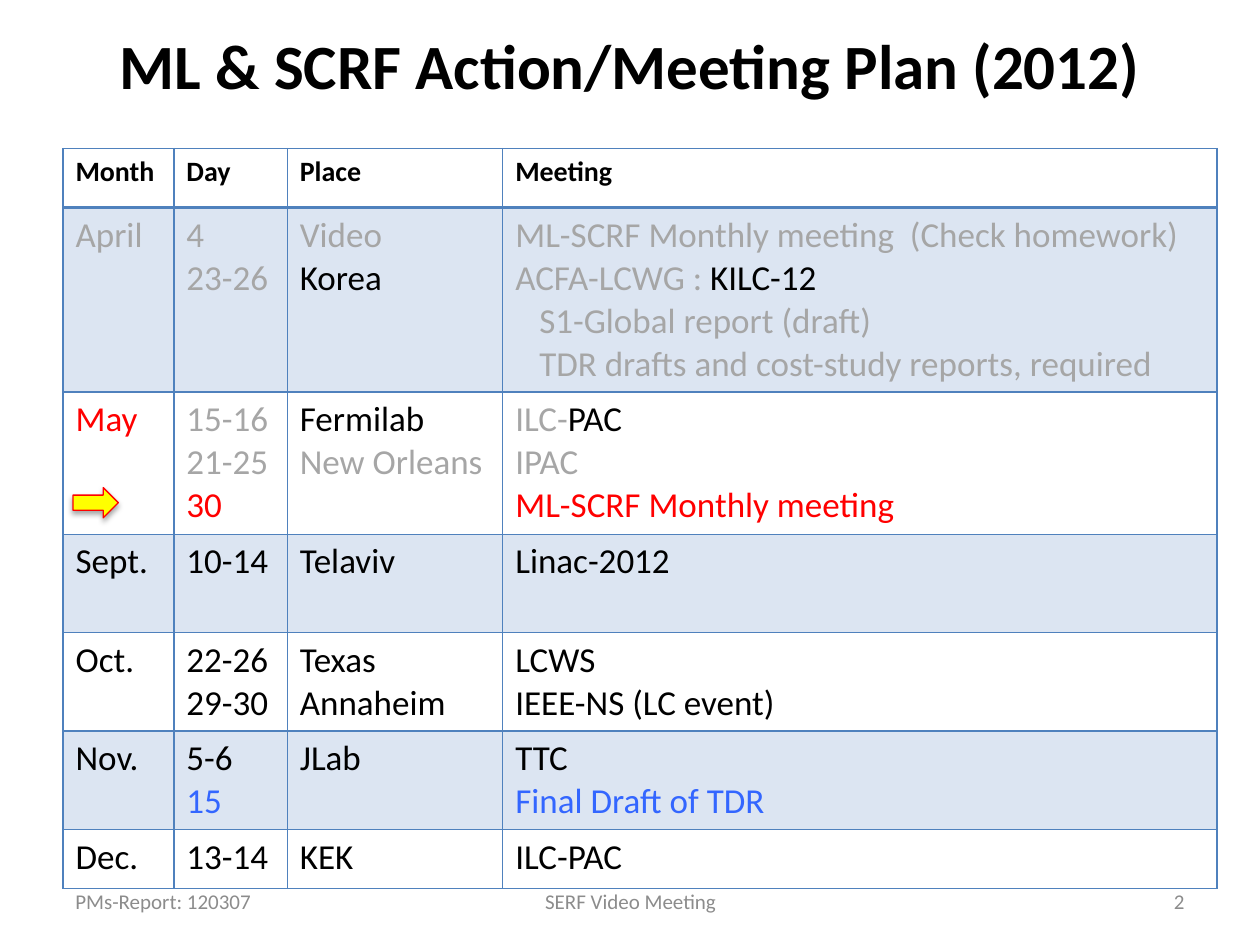
"""Build the 2012 meeting plan slide."""
from lxml import etree
from pptx import Presentation
from pptx import util as u
from pptx.dml import color
from pptx.enum import shapes, text
from pptx.oxml import ns

GRAY, RED, BLUE, EDGE = "A6A6A6", "FF0000", "3366FF", "4F81BD"
LEFT, MID, RIGHT = text.PP_ALIGN.LEFT, text.PP_ALIGN.CENTER, text.PP_ALIGN.RIGHT


def rgb(code):
    """Turn a hex string into a colour."""
    return color.RGBColor.from_string(code)


def node(parent, tag, **attrs):
    """Add a drawing element with its attributes."""
    item = etree.SubElement(parent, ns.qn("a:" + tag))
    for key, val in attrs.items():
        item.set(key, str(val))
    return item


def box(*vals):
    """Give left, top, width and height as lengths."""
    return [u.Inches(val) for val in vals]


class Deck:
    """Hold the style and the current slide."""

    base = {"name": "Calibri", "size": u.Pt(20), "bold": False}

    def __init__(self, prs):
        """Add a slide with a title."""
        self.slide = prs.slides.add_slide(prs.slide_layouts[5])

    def run(self, para, words, code="000000", **form):
        """Add a formatted run."""
        run = para.add_run()
        run.text = words
        for key, val in {**self.base, **form}.items():
            setattr(run.font, key, val)
        run.font.color.rgb = rgb(code)

    def label(self, shape, place, words, align, code, **form):
        """Place one line of text in a shape."""
        for key, val in zip(("left", "top", "width", "height"), box(*place)):
            setattr(shape, key, val)
        frame = shape.text_frame
        frame.word_wrap = True
        frame.vertical_anchor = text.MSO_ANCHOR.MIDDLE
        para = frame.paragraphs[0]
        para.alignment = align
        self.run(para, words, code, **form)

    def title(self, place, words):
        """Fill the title placeholder."""
        self.label(self.slide.shapes.title, place, words, MID, "000000",
                   size=u.Pt(36), bold=True)

    def foot(self, place, words, align):
        """Add a footer line."""
        shape = self.slide.shapes.add_textbox(*box(*place))
        self.label(shape, place, words, align, "8C8C8C", size=u.Pt(12))

    def cell(self, cell, lines, row):
        """Fill one cell, with its borders and text."""
        props = cell._tc.get_or_add_tcPr()
        wide = {"T": 2 if row == 1 else 1, "B": 2 if row == 0 else 1}
        for side in "LRTB":
            line = node(props, "ln" + side, w=u.Pt(wide.get(side, 1)))
            node(node(line, "solidFill"), "srgbClr", val=EDGE)
        cell.fill.solid()
        cell.fill.fore_color.rgb = rgb("DCE5F2" if row % 2 else "FFFFFF")
        form = {} if row else {"size": u.Pt(16), "bold": True}
        for num, line in enumerate(lines):
            frame = cell.text_frame
            para = frame.add_paragraph() if num else frame.paragraphs[0]
            for part in line if isinstance(line, list) else [line]:
                words, code, *inset = (part, "000000") if isinstance(part, str) else part
                if inset:
                    para._p.get_or_add_pPr().set("marL", str(u.Inches(inset[0])))
                self.run(para, words, code, **form)

    def table(self, place, cols, rows, data):
        """Add a table from rows of cells."""
        grid = self.slide.shapes.add_table(len(rows), len(cols), *box(*place)).table
        grid.first_row = grid.horz_banding = False
        for col, wide in zip(grid.columns, cols):
            col.width = u.Inches(wide)
        for row, high in zip(grid.rows, rows):
            row.height = u.Inches(high)
        for num, cells in enumerate(data):
            for col, lines in enumerate(cells):
                self.cell(grid.cell(num, col), lines, num)

    def arrow(self, place):
        """Add a block arrow with a soft shadow."""
        shape = self.slide.shapes.add_shape(shapes.MSO_SHAPE.RIGHT_ARROW, *box(*place))
        shape.fill.solid()
        shape.fill.fore_color.rgb = rgb("FFFF00")
        shape.line.color.rgb = rgb(RED)
        shape.line.width = u.Pt(0.75)
        shape.shadow.inherit = False
        glow = node(shape._element.spPr.find(ns.qn("a:effectLst")), "outerShdw",
                    blurRad=u.Pt(3.1), dist=u.Pt(1.8), dir=5400000, rotWithShape=0)
        node(node(glow, "srgbClr", val="000000"), "alpha", val=35000)


PLAN = [
    [["Month"], ["Day"], ["Place"], ["Meeting"]],
    [[("April", GRAY)], [("4", GRAY), ("23-26", GRAY)], [("Video", GRAY), "Korea"],
     [("ML-SCRF Monthly meeting  (Check homework)", GRAY),
      [("ACFA-LCWG : ", GRAY), "KILC-12"],
      ("S1-Global report (draft)", GRAY, 0.19),
      ("TDR drafts and cost-study reports, required", GRAY, 0.19)]],
    [[("May", RED)], [("15-16", GRAY), ("21-25", GRAY), ("30", RED)],
     ["Fermilab", ("New Orleans", GRAY)],
     [[("ILC-", GRAY), "PAC"], ("IPAC", GRAY), ("ML-SCRF Monthly meeting", RED)]],
    [["Sept."], ["10-14"], ["Telaviv"], ["Linac-2012"]],
    [["Oct."], ["22-26", "29-30"], ["Texas", "Annaheim"], ["LCWS", "IEEE-NS (LC event)"]],
    [["Nov."], ["5-6", ("15", BLUE)], ["JLab"], ["TTC", ("Final Draft of TDR", BLUE)]],
    [["Dec."], ["13-14"], ["KEK"], ["ILC-PAC"]],
]


def main():
    """Build and save the slide."""
    prs = Presentation()
    prs.slide_width, prs.slide_height = box(10, 7.5)
    deck = Deck(prs)
    deck.title((0.5, 0.11, 9, 0.8), "ML & SCRF Action/Meeting Plan (2012)")
    deck.table((0.5, 1.18, 9.16, 5.87), (0.88, 0.9, 1.71, 5.67),
               (0.47, 1.46, 1.13, 0.78, 0.78, 0.78, 0.47), PLAN)
    for left, wide, words, align in ((0.5, 2.33, "PMs-Report: 120307", LEFT),
                                     (3.42, 3.17, "SERF Video Meeting", MID),
                                     (7.17, 2.33, "2", RIGHT)):
        deck.foot((left, 6.95, wide, 0.4), words, align)
    deck.arrow((0.58, 3.87, 0.36, 0.24))
    prs.save("out.pptx")


if __name__ == "__main__":
    main()
